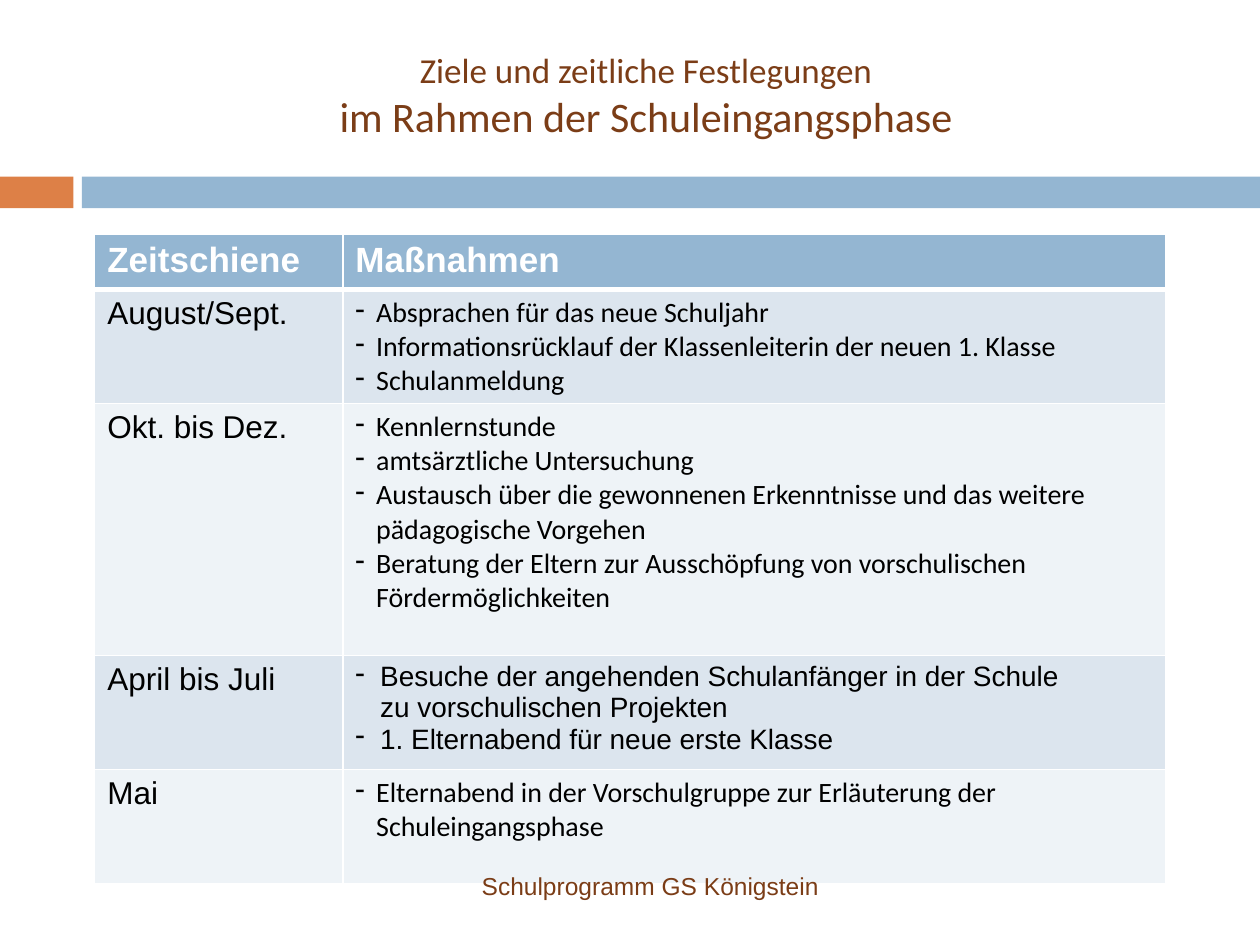
"""Build the slide on goals and dates of the school entry phase."""
from dataclasses import dataclass

from lxml import etree
from pptx import Presentation
from pptx.dml.color import RGBColor
from pptx.enum.shapes import MSO_SHAPE
from pptx.enum.text import MSO_ANCHOR, PP_ALIGN
from pptx.oxml.ns import qn
from pptx.util import Cm, Pt

RECT = MSO_SHAPE.RECTANGLE
MIDDLE = MSO_ANCHOR.MIDDLE
CENTER, LEFT, RIGHT = PP_ALIGN.CENTER, PP_ALIGN.LEFT, PP_ALIGN.RIGHT


@dataclass(frozen=True)
class Theme:
    orange: str = "DD8047"
    blue: str = "94B6D2"
    brown: str = "7B3D17"
    white: str = "FFFFFF"
    black: str = "000000"
    bands: tuple[str, str] = ("DCE5EE", "EEF3F7")
    sans: str = "Arial"
    soft: str = "Calibri"
    big: int = 24
    head: int = 20
    label: int = 18
    item: int = 16
    foot: int = 14


@dataclass(frozen=True)
class Box:
    left: float
    top: float
    width: float
    height: float

    def cm(self) -> tuple:
        return tuple(Cm(v) for v in (self.left, self.top, self.width, self.height))


@dataclass(frozen=True)
class Bar:
    box: Box
    color: str


@dataclass(frozen=True)
class Line:
    text: str
    size: int
    font: str
    color: str
    bold: bool = False
    align: PP_ALIGN = LEFT
    hang: float = 0


@dataclass(frozen=True)
class Phase:
    label: str
    items: tuple[str, ...]
    height: float
    font: str
    hang: float


T = Theme()
BARS = (
    Bar(Box(0, 3.56, 1.48, 0.64), T.orange),
    Bar(Box(1.65, 3.56, 23.75, 0.64), T.blue),
)
TITLE = (
    Line("Ziele und zeitliche Festlegungen", T.head, T.soft, T.brown, align=CENTER),
    Line("im Rahmen der Schuleingangsphase", T.big, T.soft, T.brown, align=CENTER),
)
FOOT = (Line("Schulprogramm GS Königstein", T.foot, T.sans, T.brown, align=RIGHT),)
HEADS = ("Zeitschiene", "Maßnahmen")
COLS = (5.0, 16.6)
TOP = 1.09
PHASES = (
    Phase("August/Sept.", (
        "Absprachen für das neue Schuljahr",
        "Informationsrücklauf der Klassenleiterin der neuen 1. Klasse",
        "Schulanmeldung",
    ), 2.3, T.soft, 0.42),
    Phase("Okt. bis Dez.", (
        "Kennlernstunde",
        "amtsärztliche Untersuchung",
        "Austausch über die gewonnenen Erkenntnisse und das weitere "
        "pädagogische Vorgehen",
        "Beratung der Eltern zur Ausschöpfung von vorschulischen "
        "Fördermöglichkeiten",
    ), 5.08, T.soft, 0.42),
    Phase("April bis Juli", (
        "Besuche der angehenden Schulanfänger in der Schule\v"
        "zu vorschulischen Projekten",
        "1. Elternabend für neue erste Klasse",
    ), 2.3, T.sans, 0.5),
    Phase("Mai", (
        "Elternabend in der Vorschulgruppe zur Erläuterung der "
        "Schuleingangsphase",
    ), 2.3, T.soft, 0.42),
)


def style(obj, form: dict) -> None:
    for name, value in form.items():
        setattr(obj, name, value)


def write(frame, lines: tuple[Line, ...]) -> None:
    for i, line in enumerate(lines):
        para = frame.paragraphs[0] if i == 0 else frame.add_paragraph()
        style(para, {"text": line.text, "alignment": line.align})
        for run in para.runs:
            style(run.font, {"size": Pt(line.size), "name": line.font, "bold": line.bold})
            run.font.color.rgb = RGBColor.from_string(line.color)
        if line.hang:
            props = para._p.get_or_add_pPr()
            props.set("marL", str(Cm(line.hang)))
            props.set("indent", str(-Cm(line.hang)))
            etree.SubElement(props, qn("a:buChar"), char="-")


def add_bar(slide, bar: Bar) -> None:
    shape = slide.shapes.add_shape(RECT, *bar.box.cm())
    shape.shadow.inherit = False
    shape.fill.solid()
    shape.fill.fore_color.rgb = RGBColor.from_string(bar.color)
    shape.line.fill.background()


def add_text(slide, box: Box, lines: tuple[Line, ...]) -> None:
    frame = slide.shapes.add_textbox(*box.cm()).text_frame
    style(frame, {"word_wrap": True, "vertical_anchor": MIDDLE})
    write(frame, lines)


def edge(cell, widths: dict[str, int]) -> None:
    props = cell._tc.get_or_add_tcPr()
    for i, (side, width) in enumerate(widths.items()):
        line = etree.Element(qn(f"a:ln{side}"), w=str(Pt(width)))
        fill = etree.SubElement(line, qn("a:solidFill"))
        etree.SubElement(fill, qn("a:srgbClr"), val=T.white)
        props.insert(i, line)


def fill_row(table, row: int, color: str, pair: tuple) -> None:
    for col, lines in enumerate(pair):
        cell = table.cell(row, col)
        cell.fill.solid()
        cell.fill.fore_color.rgb = RGBColor.from_string(color)
        edge(cell, {"L": 1, "R": 1, "T": 3 if row == 1 else 1, "B": 3 if row == 0 else 1})
        write(cell.text_frame, lines)


def add_plan(slide) -> None:
    highs = (TOP, *(p.height for p in PHASES))
    box = Box(1.91, 4.73, sum(COLS), sum(highs))
    table = slide.shapes.add_table(len(highs), len(COLS), *box.cm()).table
    table.horz_banding = False
    for col, width in zip(table.columns, COLS):
        col.width = Cm(width)
    for row, high in zip(table.rows, highs):
        row.height = Cm(high)
    heads = tuple((Line(h, T.head, T.sans, T.white, bold=True),) for h in HEADS)
    fill_row(table, 0, T.blue, heads)
    for i, phase in enumerate(PHASES):
        label = (Line(phase.label, T.label, T.sans, T.black),)
        items = tuple(Line(text, T.item, phase.font, T.black, hang=phase.hang)
                      for text in phase.items)
        fill_row(table, i + 1, T.bands[i % 2], (label, items))


def main() -> None:
    deck = Presentation()
    style(deck, {"slide_width": Cm(25.4), "slide_height": Cm(19.05)})
    slide = deck.slides.add_slide(deck.slide_layouts[6])
    for bar in BARS:
        add_bar(slide, bar)
    add_text(slide, Box(1.7, 0.53, 22.65, 2.75), TITLE)
    add_plan(slide)
    add_text(slide, Box(1.7, 17.35, 15.06, 1.02), FOOT)
    deck.save("out.pptx")


if __name__ == "__main__":
    main()
